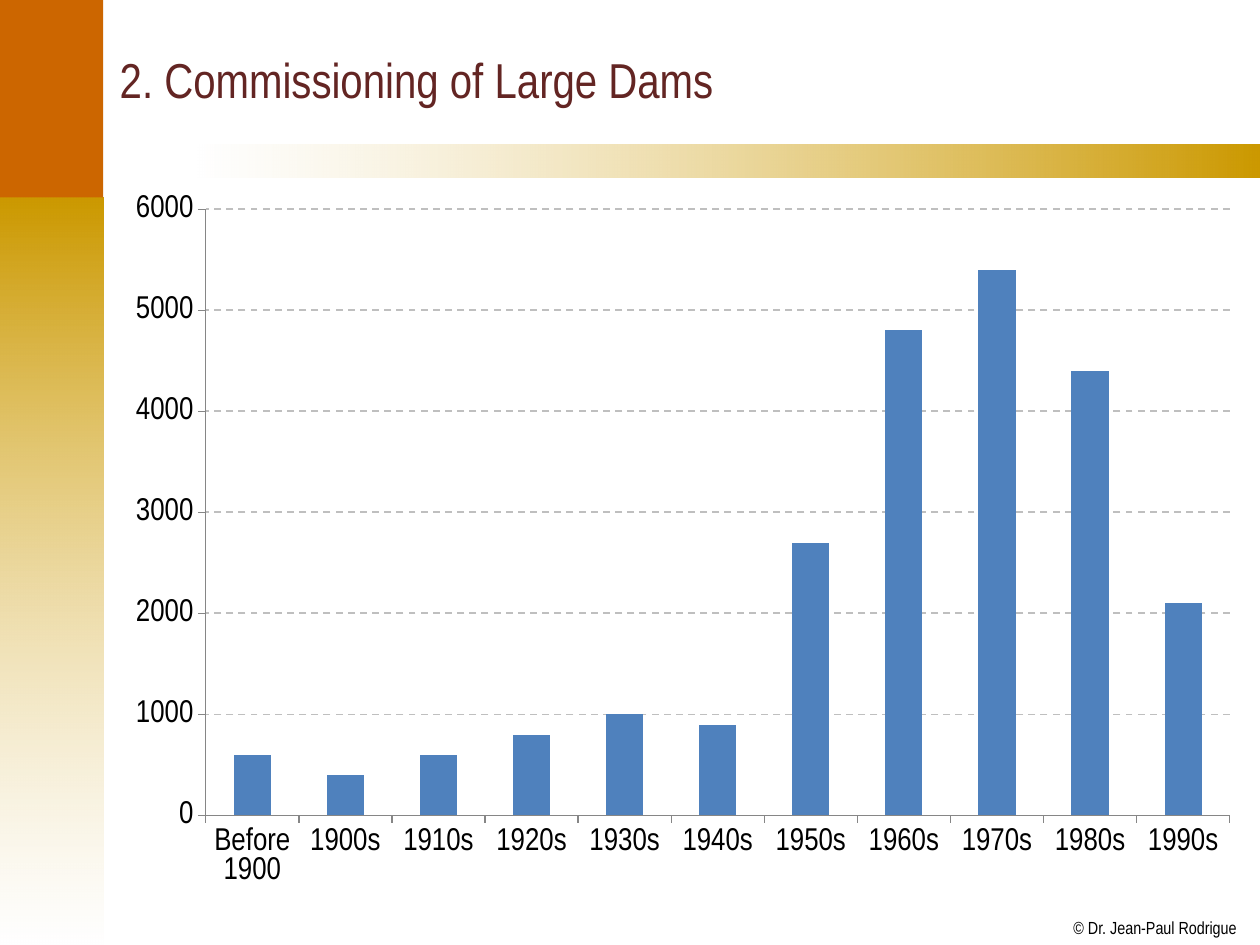
from pptx import Presentation
from pptx.chart.data import CategoryChartData
from pptx.dml.color import RGBColor
from pptx.enum.chart import XL_CHART_TYPE, XL_TICK_MARK
from pptx.enum.dml import MSO_LINE
from pptx.enum.shapes import MSO_SHAPE
from pptx.enum.text import MSO_ANCHOR, MSO_AUTO_SIZE, PP_ALIGN
from pptx.oxml import parse_xml
from pptx.oxml.ns import nsdecls, qn
from pptx.util import Cm, Pt

RECT = MSO_SHAPE.RECTANGLE
COLUMN = XL_CHART_TYPE.COLUMN_CLUSTERED
OUT = XL_TICK_MARK.OUTSIDE
DASH = MSO_LINE.DASH
MIDDLE = MSO_ANCHOR.MIDDLE
GROW = MSO_AUTO_SIZE.SHAPE_TO_FIT_TEXT
LEFT = PP_ALIGN.LEFT

THEME = {
    "font": "Arial Narrow",
    "title": 28, "chart": 18, "credit": 10,
    "maroon": "632523", "black": "000000", "white": "FFFFFF",
    "gold": "CC9900", "orange": "CC6600", "blue": "4F81BD",
    "grid": "BFBFBF", "axis": "868686",
}

TITLE = "2. Commissioning of Large Dams"
CREDIT = "© Dr. Jean-Paul Rodrigue"
DAMS = [
    ("Before 1900", 600), ("1900s", 400), ("1910s", 600), ("1920s", 800),
    ("1930s", 1000), ("1940s", 900), ("1950s", 2700), ("1960s", 4800),
    ("1970s", 5400), ("1980s", 4400), ("1990s", 2100),
]
BANDS = [
    ((-0.03, 3.99, 2.11, 15.06), (("gold", 100), ("white", 51)), 270),
    ((3.99, 2.92, 21.41, 0.66), (("white", 50), ("gold", 100)), 0),
    ((-0.03, -0.03, 2.11, 4.01), (("orange", 100),), 0),
]
PLOT = {"x": 0.089, "y": 0.04, "w": 0.901, "h": 0.831}


def tint(name):
    return RGBColor.from_string(THEME[name])


def style(font, size, color):
    font.name = THEME["font"]
    font.size = Pt(THEME[size])
    font.bold = False
    font.color.rgb = tint(color)


def box(*sides):
    return [Cm(side) for side in sides]


def add_band(slide, place, stops, angle):
    band = slide.shapes.add_shape(RECT, *box(*place))
    band.shadow.inherit = False
    band.line.fill.background()
    if len(stops) == 1:
        band.fill.solid()
        band.fill.fore_color.rgb = tint(stops[0][0])
        return
    band.fill.gradient()
    band.fill.gradient_angle = angle
    for stop, (name, _) in zip(band.fill.gradient_stops, stops):
        stop.color.rgb = tint(name)
    colors = band._element.spPr.iter(qn("a:srgbClr"))
    for color, (_, alpha) in zip(list(colors), stops):
        if alpha < 100:
            color.append(parse_xml(
                f'<a:alpha {nsdecls("a")} val="{alpha * 1000}"/>'))


def add_title(slide):
    title = slide.shapes.title
    title.left, title.top, title.width, title.height = box(2.16, 0.28, 22.81, 2.64)
    frame = title.text_frame
    frame.text = TITLE
    frame.vertical_anchor = MIDDLE
    frame.paragraphs[0].alignment = LEFT
    style(frame.paragraphs[0].runs[0].font, "title", "maroon")


def add_credit(slide):
    frame = slide.shapes.add_textbox(*box(21.64, 18.49, 3.3, 0.43)).text_frame
    frame.margin_left = frame.margin_right = 0
    frame.margin_top = frame.margin_bottom = 0
    frame.word_wrap = False
    frame.auto_size = GROW
    frame.text = CREDIT
    style(frame.paragraphs[0].runs[0].font, "credit", "black")


def set_plot(chart):
    area = chart._chartSpace.chart.plotArea
    for old in area.findall(qn("c:layout")):
        area.remove(old)
    modes = "".join(f'<c:{side}Mode val="edge"/>' for side in "xy")
    sizes = "".join(f'<c:{side} val="{val}"/>' for side, val in PLOT.items())
    area.insert(0, parse_xml(
        f'<c:layout {nsdecls("c")}><c:manualLayout>'
        f'<c:layoutTarget val="inner"/>{modes}{sizes}'
        '</c:manualLayout></c:layout>'))


def add_chart(slide):
    data = CategoryChartData()
    data.categories = [name for name, _ in DAMS]
    data.add_series("Series 1", [count for _, count in DAMS])
    place = box(2.11, 3.63, 22.91, 14.71)
    chart = slide.shapes.add_chart(COLUMN, *place, data).chart
    chart.has_legend = chart.has_title = False
    style(chart.font, "chart", "black")
    set_plot(chart)

    plot = chart.plots[0]
    plot.gap_width = 150
    plot.vary_by_categories = False
    fill = plot.series[0].format.fill
    fill.solid()
    fill.fore_color.rgb = tint("blue")

    for axis in (chart.category_axis, chart.value_axis):
        axis.major_tick_mark = OUT
        axis.format.line.color.rgb = tint("axis")
        axis.format.line.width = Pt(0.75)
    axis = chart.value_axis
    axis.minimum_scale, axis.maximum_scale, axis.major_unit = 0, 6000, 1000
    grid = axis.major_gridlines.format.line
    grid.color.rgb = tint("grid")
    grid.width = Pt(1)
    grid.dash_style = DASH


def main():
    """Build the slide on the commissioning of large dams."""
    deck = Presentation()
    deck.slide_width, deck.slide_height = box(25.4, 19.05)
    slide = deck.slides.add_slide(deck.slide_layouts[5])
    for band in BANDS:
        add_band(slide, *band)
    add_credit(slide)
    add_title(slide)
    add_chart(slide)
    deck.save("out.pptx")


if __name__ == "__main__":
    main()
